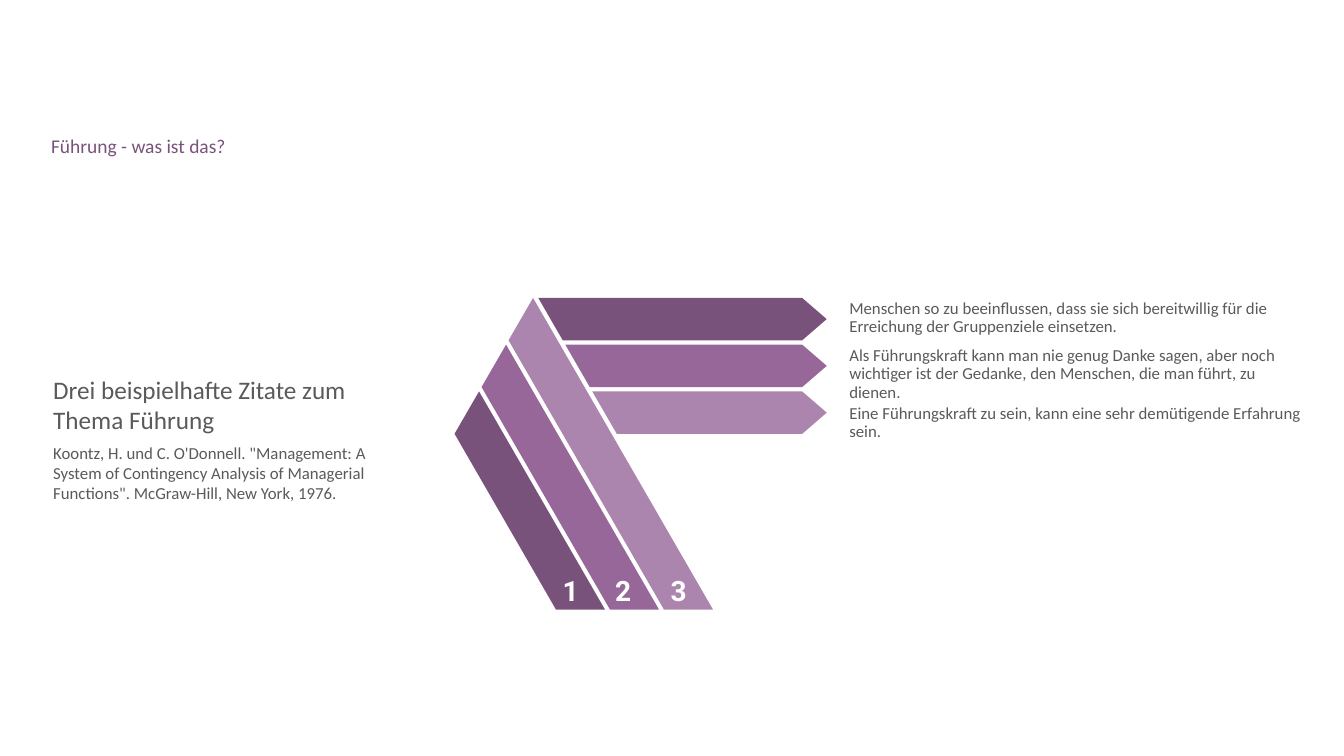
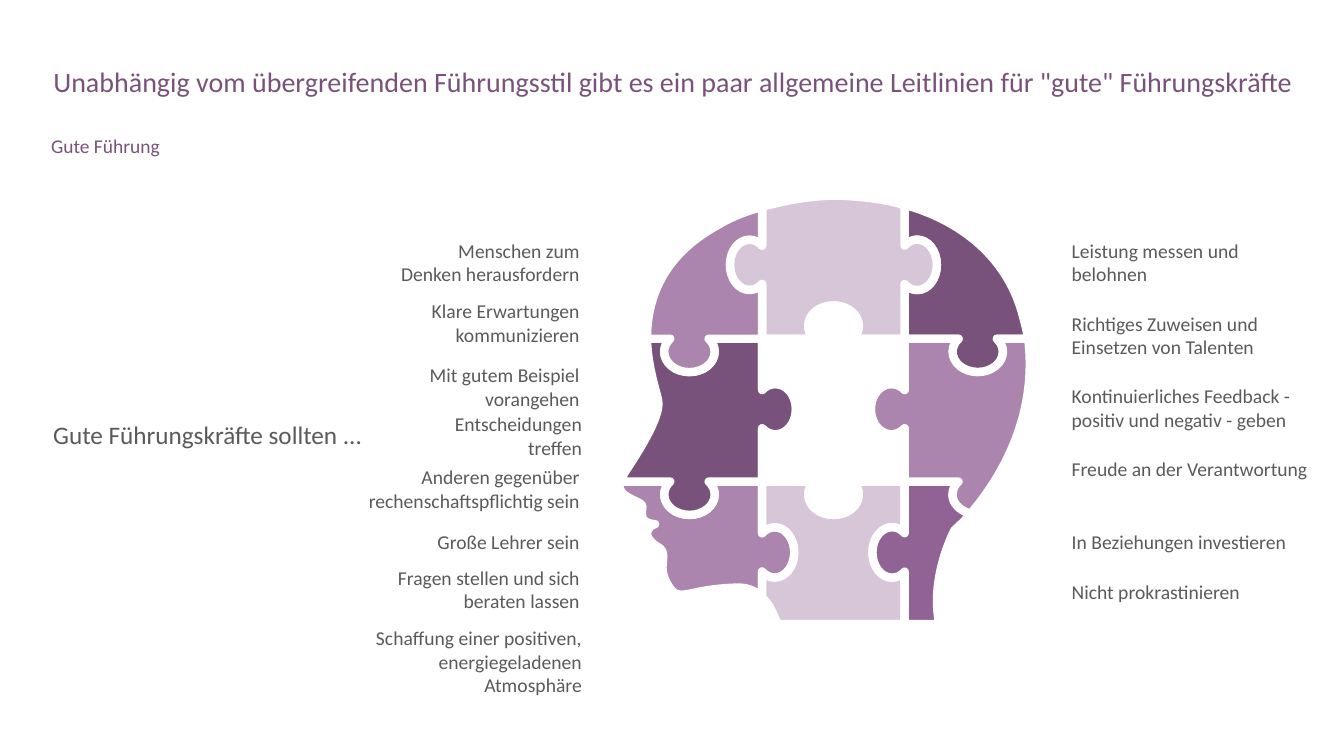
import math

import lxml.etree
import pptx
import pptx.dml.color
import pptx.enum.text
import pptx.oxml.ns
import pptx.util

Pt = pptx.util.Pt
qn = pptx.oxml.ns.qn
ALIGN = pptx.enum.text.PP_ALIGN
ANCHOR = pptx.enum.text.MSO_ANCHOR

PLUM, ORCHID, MAUVE = "79527B", "976799", "AB85AD"
LILAC, VIOLET, GREY, WHITE = "D7C6D8", "916395", "595A59", "FFFFFF"


def color(value):
    return pptx.dml.color.RGBColor.from_string(value)


def knob_points(x, y, direction, depth):
    half = [(13.7, 0), (16.4, 0.1), (18, 0.24), (18, 0.39), (18, 0.73), (9.9, 1)]
    profile = half + [(0, 1)] + [(-side, rise) for side, rise in reversed(half)]
    sign = 1 if direction in ("down", "right") else -1
    if direction in ("down", "up"):
        return [(x + side, y + sign * rise * depth) for side, rise in profile]
    return [(x + sign * rise * depth, y + side) for side, rise in profile]


def trace(steps):
    segments = []
    for step in steps:
        if len(step) == 4:
            points = knob_points(*step)
            last = segments[-1][-1]
            if math.dist(last, points[0]) > math.dist(last, points[-1]):
                points.reverse()
            segments.append(points[:1])
            segments.extend(points[index:index + 3] for index in range(1, 13, 3))
        else:
            segments.append([step[index:index + 2] for index in range(0, len(step), 2)])
    return segments


class SlideWriter:
    """Holds the shared style and the slide being drawn."""

    font = "Calibri"
    small_insets = (2.9, 1.4)
    caption_size = 12
    label_size = 14

    def __init__(self):
        self.deck = pptx.Presentation()
        self.deck.slide_width = Pt(960)
        self.deck.slide_height = Pt(540)
        self.page = None

    def new_page(self):
        self.page = self.deck.slides.add_slide(self.deck.slide_layouts[6])

    def text(self, paragraphs, left, top, width, height, tint=GREY, font=None,
             bold=False, align=ALIGN.LEFT, anchor=ANCHOR.TOP,
             insets=(7.2, 3.6), spacing=None):
        box = self.page.shapes.add_textbox(Pt(left), Pt(top), Pt(width), Pt(height))
        frame = box.text_frame
        frame.word_wrap = True
        frame.vertical_anchor = anchor
        frame.margin_left = frame.margin_right = Pt(insets[0])
        frame.margin_top = frame.margin_bottom = Pt(insets[1])
        for index, (words, size) in enumerate(paragraphs):
            para = frame.add_paragraph() if index else frame.paragraphs[0]
            para.text = words
            para.alignment = align
            para.line_spacing = spacing
            if index:
                para.space_before = Pt(6)
            para.font.name = font or self.font
            para.font.size = Pt(size)
            para.font.bold = bold
            para.font.color.rgb = color(tint)

    def title(self, words):
        self.text([(words, 20)], 31, 45.4, 903, 46, PLUM, spacing=0.9)

    def subtitle(self, words):
        self.text([(words, 13.9)], 29.4, 96.8, 904, 20, PLUM, spacing=0.7)

    def side_note(self, paragraphs, top=129):
        self.text(paragraphs, 30.9, top, 251, 363, anchor=ANCHOR.MIDDLE)

    def caption(self, words, top):
        self.text([(words, self.caption_size)], 603.8, top, 330, 29,
                  insets=self.small_insets, spacing=Pt(13.1))

    def label(self, words, left, top, width, align=ALIGN.LEFT):
        self.text([(words, self.label_size)], left, top, width, 36.7,
                  align=align, insets=self.small_insets)

    def number(self, words, left):
        self.text([(words, 20)], left, 409.7, 27.4, 25, WHITE, "Roboto", True,
                  ALIGN.CENTER, insets=(0, 0))

    def outline(self, steps, fill, border=None):
        segments = [[(Pt(x), Pt(y)) for x, y in segment] for segment in trace(steps)]
        anchors = [segment[-1] for segment in segments]
        builder = self.page.shapes.build_freeform(*anchors[0])
        builder.add_line_segments(anchors[1:], close=True)
        shape = builder.convert_to_shape()
        lines = list(shape.element.iter(qn("a:lnTo")))
        for line, segment in zip(lines, segments[1:]):
            if len(segment) == 3:
                curve = lxml.etree.Element(qn("a:cubicBezTo"))
                for x, y in segment:
                    lxml.etree.SubElement(curve, qn("a:pt"), x=str(x - shape.left),
                                          y=str(y - shape.top))
                line.getparent().replace(line, curve)
        shape.shadow.inherit = False
        shape.fill.solid()
        shape.fill.fore_color.rgb = color(fill)
        if border:
            shape.line.color.rgb = color(border)
            shape.line.width = Pt(6)
        else:
            shape.line.fill.background()


def draw_quotes(writer):
    writer.new_page()
    writer.side_note([
        ("Drei beispielhafte Zitate zum Thema Führung", 18),
        ("Koontz, H. und C. O'Donnell. \"Management: A System of Contingency Analysis "
         "of Managerial Functions\". McGraw-Hill, New York, 1976.", 12),
    ], top=131.8)
    writer.subtitle("Führung - was ist das?")

    slant = math.tan(math.radians(30))
    top, bottom, band, step = 212.8, 435.4, 30.3, 33.4
    tints = (PLUM, ORCHID, MAUVE)
    for index, tint in enumerate(tints):
        peak_y = top + (2 - index) * step
        peak_x = 342.2 + index * step * slant
        shoulder_x, shoulder_y = peak_x - band * slant, peak_y + band
        writer.outline([
            (shoulder_x, shoulder_y),
            (shoulder_x + (bottom - shoulder_y) * slant, bottom),
            (peak_x + (bottom - peak_y) * slant, bottom),
            (peak_x, peak_y),
        ], tint)
    for index, tint in reversed(list(enumerate(tints))):
        arrow_y = top + index * step
        arrow_x = 384.5 + index * step * slant
        writer.outline([
            (573, arrow_y + band), (590.5, arrow_y + band / 2), (573, arrow_y),
            (arrow_x, arrow_y), (arrow_x + band * slant, arrow_y + band),
        ], tint)

    for words, left in (("1", 394), ("2", 431.4), ("3", 471)):
        writer.number(words, left)
    for words, caption_top in (
        ("Menschen so zu beeinflussen, dass sie sich bereitwillig für die Erreichung "
         "der Gruppenziele einsetzen.", 212.7),
        ("Als Führungskraft kann man nie genug Danke sagen, aber noch wichtiger ist "
         "der Gedanke, den Menschen, die man führt, zu dienen.", 246.2),
        ("Eine Führungskraft zu sein, kann eine sehr demütigende Erfahrung sein.", 287.3),
    ):
        writer.caption(words, caption_top)


def draw_head(writer):
    front, back, brow, mouth, base = 544.4, 646.2, 242, 344, 445.8
    columns, rows = (492.5, 595.4, 698.4), (189.2, 292.3, 394.6)
    depths = (23, 24.2, 23)
    brow_knobs = [(x, brow, way, 23.8) for x, way in zip(columns, ("down", "up", "down"))]
    mouth_knobs = [(x, mouth, "down", 23.8) for x in columns]
    front_knobs = [(front, y, way, depth) for y, way, depth
                   in zip(rows, ("left", "right", "right"), depths)]
    back_knobs = [(back, y, way, depth) for y, way, depth
                  in zip(rows, ("right", "left", "left"), depths)]
    forehead, nose, nape, skull = (462.2, brow), (443.5, mouth), (693.4, 367.2), (734.4, brow)

    jaw = [
        (front, mouth), front_knobs[2], (front, 427),
        (540, 422, 533.5, 419, 524.2, 419.8),
        (488.9, 421.2, 485.3, 431.3, 477.4, 418.3),
        (468.7, 404.6, 477.4, 397.4, 471.6, 391.7),
        (471.6, 391.7, 463, 387.4, 462.2, 381.6),
        (462.2, 375.8, 468, 374.4, 468, 374.4),
        (468, 374.4, 458.6, 374.4, 458.6, 367.9),
        (457.9, 361.4, 462.2, 361.4, 452.2, 357.1),
        (445, 353.5, 441.4, 350.6, 442.8, 345.6),
        nose, mouth_knobs[0],
    ]
    neck = [
        (front, mouth), mouth_knobs[1], (back, mouth), back_knobs[2], (back, base),
        (555, base), (554.4, 443.5), (552.2, 437.8, 549.4, 431.3, front, 427),
        front_knobs[2],
    ]
    face = [
        forehead, brow_knobs[0], (front, brow), front_knobs[1], (front, mouth),
        mouth_knobs[0], nose, (445.7, 338.4),
        (452.2, 328.3, 472.3, 298.8, 470.2, 286.6),
        (469.4, 280.8, 463, 264.2, 462.2, 243.4),
    ]
    rear_crown = [
        (back, 146.2), (653, 148.3), (690.5, 160.6, 720.7, 186.5, 730.8, 226.1),
        (733, 234.7), skull, brow_knobs[2], (back, brow), back_knobs[0],
    ]
    rear_neck = [
        (back, mouth), (684.7, mouth),
        (681.8, 346.3, 680.4, 349.9, 680.4, 353.5),
        (680.4, 359.3, 685.4, 364.3, 691.9, 366.5), nape,
        (686.9, 374.4, 681.8, 378.7, 681.8, 378.7),
        (681.8, 378.7, 663.8, 412.6, 671, base), (back, base), back_knobs[2],
    ]
    rear = [
        (back, brow), brow_knobs[2], skull,
        (741.6, 298.8, 713.5, 342.7, 695.5, 364.3), nape, (691.9, 366.5),
        (685.4, 364.3, 680.4, 359.3, 680.4, 353.5),
        (680.4, 349.9, 681.8, 346.3, 684.7, mouth), (back, mouth), back_knobs[1],
    ]
    crown = [
        (599, 139.7), (614.2, 140.4, 628.6, 141.8, 642.2, 145.4), (back, 146.9),
        back_knobs[0], (back, brow), brow_knobs[1], (front, brow), front_knobs[0],
        (front, 147.6), (553.7, 145.4), (568.1, 141.8, 583.9, 139.7, 599, 139.7),
    ]
    front_crown = [
        (front, 147.6), front_knobs[0], (front, brow), brow_knobs[0], forehead,
        (462.2, 239), (463, 213.1, 473, 182.9, 511.9, 161.3),
        (521.3, 155.5, 532.1, 151.2, 542.9, 148.3),
    ]
    gap = [
        (front, brow), brow_knobs[1], (back, brow), back_knobs[1], (back, mouth),
        mouth_knobs[1], (front, mouth), front_knobs[1],
    ]
    for steps, fill in (
        (jaw, MAUVE), (neck, LILAC), (face, PLUM), (rear_crown, PLUM),
        (rear_neck, VIOLET), (rear, MAUVE), (crown, LILAC), (front_crown, MAUVE),
        (gap, WHITE),
    ):
        writer.outline(steps, fill, WHITE)


def draw_guidelines(writer):
    writer.new_page()
    writer.side_note([("Gute Führungskräfte sollten ...", 18)])
    writer.title("Unabhängig vom übergreifenden Führungsstil gibt es ein paar allgemeine "
                 "Leitlinien für \"gute\" Führungskräfte")
    writer.subtitle("Gute Führung")
    draw_head(writer)
    for words, top in (
        ("Leistung messen und belohnen", 169.2),
        ("Richtiges Zuweisen und Einsetzen von Talenten", 221.2),
        ("Kontinuierliches Feedback - positiv und negativ - geben", 273),
        ("Freude an der Verantwortung", 325.2),
        ("In Beziehungen investieren", 377.3),
        ("Nicht prokrastinieren", 412.6),
    ):
        writer.label(words, 762.6, top, 177)
    for words, right, top, width in (
        ("Menschen zum\nDenken herausfordern", 417, 169.2, 134.6),
        ("Klare Erwartungen kommunizieren", 417, 212.4, 134.6),
        ("Mit gutem Beispiel vorangehen", 417, 257.8, 134.6),
        ("Entscheidungen treffen", 418.6, 293, 134),
        ("Anderen gegenüber rechenschaftspflichtig sein", 417, 331, 166.3),
        ("Große Lehrer sein", 417, 377.3, 134.6),
        ("Fragen stellen und sich beraten lassen", 417, 402.5, 147),
        ("Schaffung einer positiven, energiegeladenen Atmosphäre", 418.6, 445.7, 161.3),
    ):
        writer.label(words, right - width, top, width, ALIGN.RIGHT)


def main():
    writer = SlideWriter()
    draw_quotes(writer)
    draw_guidelines(writer)
    writer.deck.save("out.pptx")


if __name__ == "__main__":
    main()
